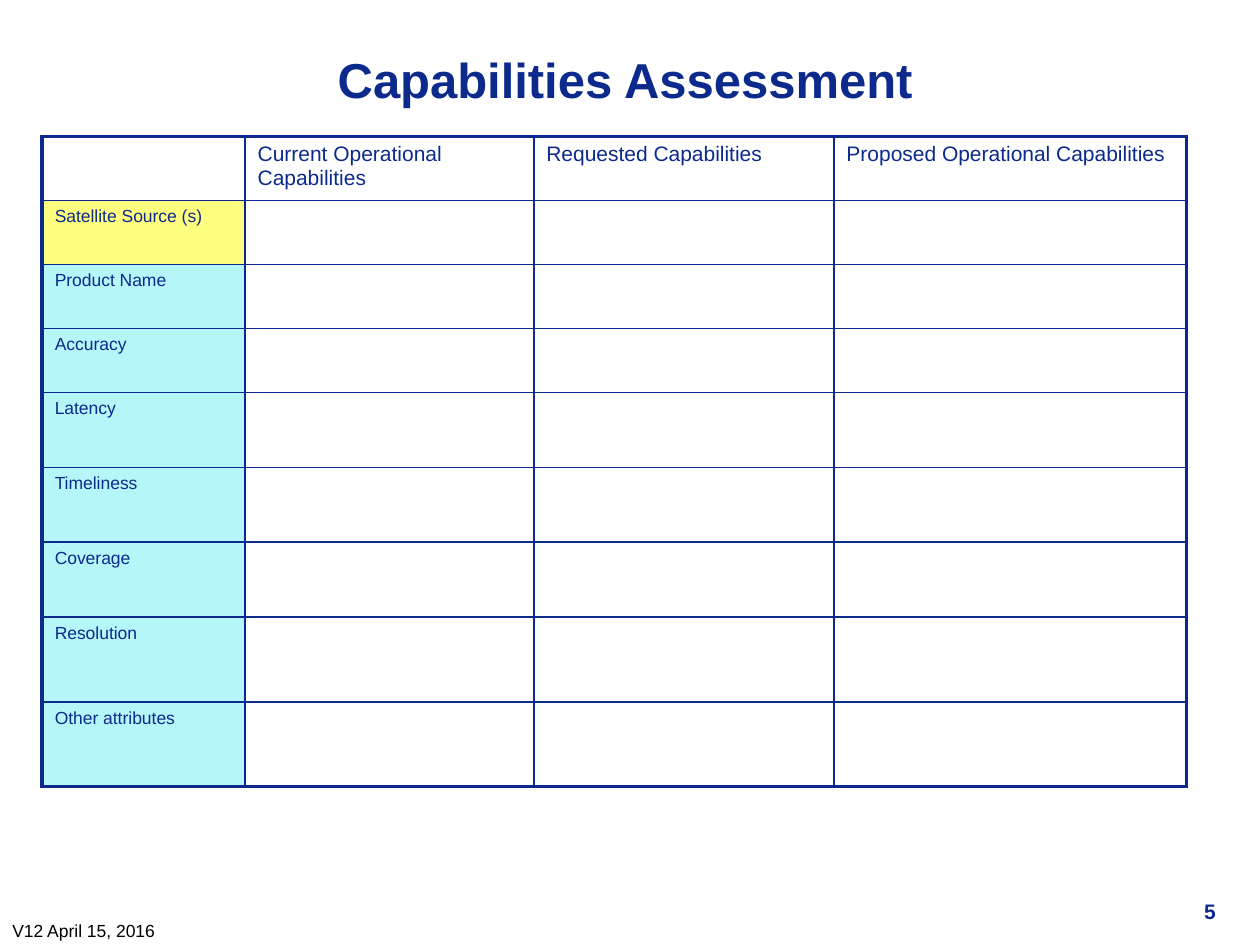
"""Build the Capabilities Assessment slide."""
from typing import NamedTuple

from lxml.etree import SubElement
from pptx import Presentation
from pptx.dml.color import RGBColor
from pptx.enum.text import MSO_ANCHOR, PP_ALIGN
from pptx.oxml.ns import qn
from pptx.util import Cm, Pt

NAVY = RGBColor(0x0C, 0x2A, 0x8C)
BLACK = RGBColor(0, 0, 0)
YELLOW = RGBColor(0xFF, 0xFF, 0)
AQUA = RGBColor(0x6C, 0xEF, 0xF2)
THICK, THIN = 2.25, 1

WIDTHS = (4.09, 5.82, 6.05, 7.11)
HEIGHTS = (1.29,) * 4 + (1.51,) * 3 + (1.71,) * 2
HEADS = ("", "Current Operational Capabilities", "Requested Capabilities",
         "Proposed Operational Capabilities")
ROWS = ("Satellite Source (s)", "Product Name", "Accuracy", "Latency",
        "Timeliness", "Coverage", "Resolution", "Other attributes")


class Label(NamedTuple):
    text: str
    left: float
    top: float
    width: float
    height: float
    size: float
    bold: bool = True
    color: RGBColor = NAVY
    align: PP_ALIGN = PP_ALIGN.LEFT
    anchor: MSO_ANCHOR = MSO_ANCHOR.TOP


LABELS = (
    Label("5", 19.48, 17.98, 5.28, 1.07, 12, align=PP_ALIGN.RIGHT),
    Label("Capabilities Assessment", 0.64, 0.42, 23.92, 2.33, 28,
          align=PP_ALIGN.CENTER, anchor=MSO_ANCHOR.MIDDLE),
    Label("V12 April 15, 2016", 0, 18.42, 8.05, 0.63, 10, False, BLACK),
)


def write(frame, text: str, size: float, bold: bool, color: RGBColor) -> None:
    """Put one styled run of text in a frame."""
    run = frame.paragraphs[0].add_run()
    run.text = text
    style = {"name": "Arial", "size": Pt(size), "bold": bold}
    for key, value in style.items():
        setattr(run.font, key, value)
    run.font.color.rgb = color


def draw_label(slide, label: Label) -> None:
    """Draw one text box."""
    box = slide.shapes.add_textbox(*map(Cm, label[1:5]))
    frame = box.text_frame
    style = {"word_wrap": True, "vertical_anchor": label.anchor}
    for key, value in style.items():
        setattr(frame, key, value)
    write(frame, label.text, label.size, label.bold, label.color)
    frame.paragraphs[0].alignment = label.align


def add_edge(props, side: str, width: float) -> None:
    """Add one border line to a cell."""
    line = SubElement(props, qn(f"a:ln{side}"), w=str(int(Pt(width))))
    fill = SubElement(line, qn("a:solidFill"))
    SubElement(fill, qn("a:srgbClr"), val=str(NAVY))


def tint(cell, color: RGBColor) -> None:
    """Fill a cell with a half-clear color."""
    cell.fill.solid()
    cell.fill.fore_color.rgb = color
    tone = cell.fill._xPr.find(".//" + qn("a:solidFill") + "/" + qn("a:srgbClr"))
    for node in cell._tc.tcPr.findall(qn("a:solidFill") + "/" + qn("a:srgbClr")):
        tone = node
    SubElement(tone, qn("a:alpha"), val="50000")


def draw_cell(cell, row: int, col: int) -> None:
    """Draw the borders, fill and text of one cell."""
    props = cell._tc.get_or_add_tcPr()
    outer = {"L": col == 0, "R": col == len(WIDTHS) - 1,
             "T": row == 0, "B": row == len(HEIGHTS) - 1}
    for side, edge in outer.items():
        add_edge(props, side, THICK if edge else THIN)
    if row and not col:
        tint(cell, YELLOW if row == 1 else AQUA)
    else:
        cell.fill.background()
    text = HEADS[col] if row == 0 else ROWS[row - 1] if col == 0 else ""
    if text:
        write(cell.text_frame, text, 10 if row else 12, False, NAVY)


def draw_table(slide) -> None:
    """Draw the grid of capabilities."""
    frame = slide.shapes.add_table(
        len(HEIGHTS), len(WIDTHS), Cm(0.85), Cm(2.75),
        Cm(sum(WIDTHS)), Cm(sum(HEIGHTS)))
    table = frame.table
    for key, value in {"first_row": False, "horz_banding": False}.items():
        setattr(table, key, value)
    for col, width in enumerate(WIDTHS):
        table.columns[col].width = Cm(width)
    for row, height in enumerate(HEIGHTS):
        table.rows[row].height = Cm(height)
        for col in range(len(WIDTHS)):
            draw_cell(table.cell(row, col), row, col)


def main() -> None:
    """Build and save the slide."""
    deck = Presentation()
    deck.slide_width, deck.slide_height = Cm(25.4), Cm(19.05)
    slide = deck.slides.add_slide(deck.slide_layouts[6])
    draw_table(slide)
    for label in LABELS:
        draw_label(slide, label)
    deck.save("out.pptx")


if __name__ == "__main__":
    main()
